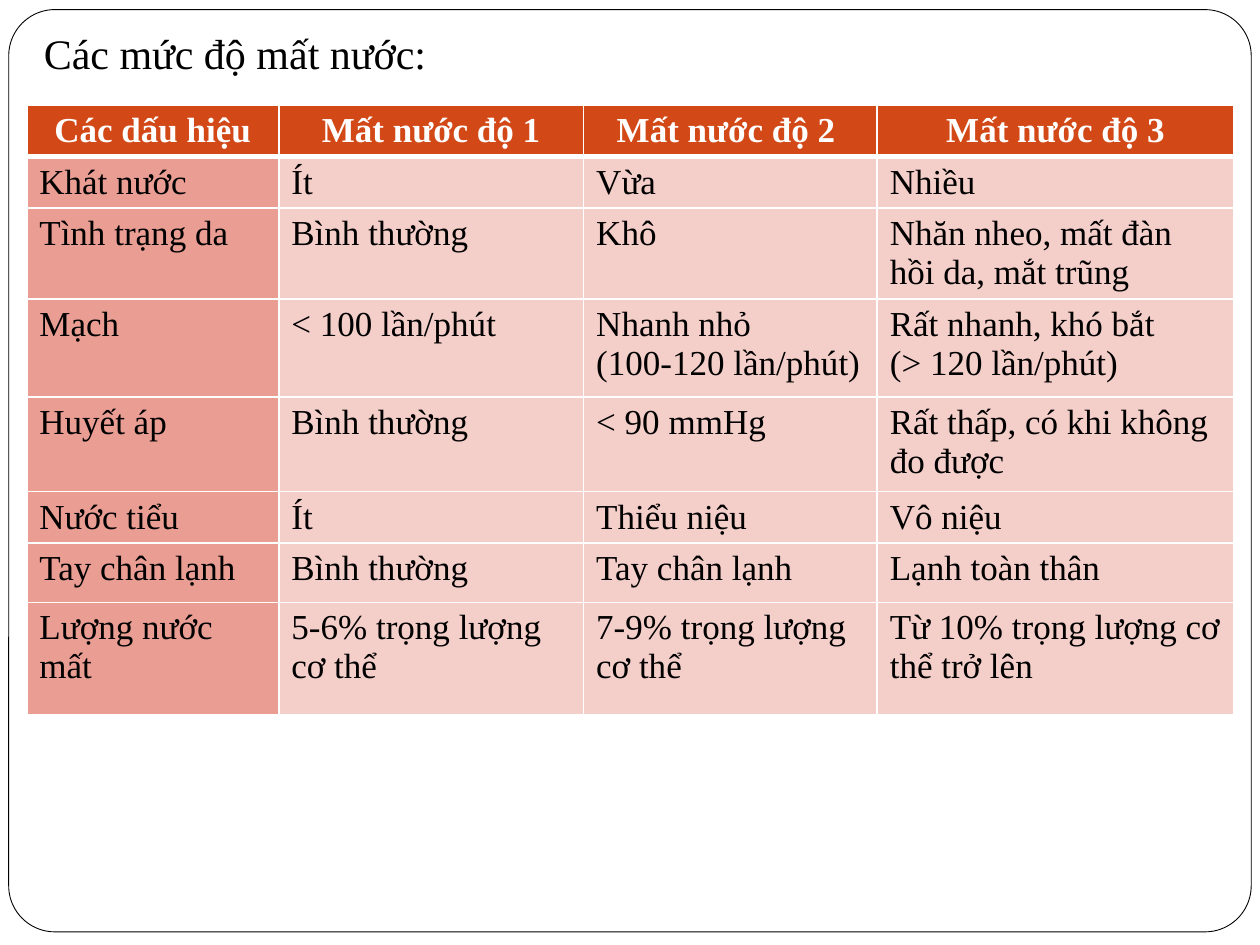
from lxml import etree
from pptx import Presentation
from pptx.dml.color import RGBColor
from pptx.enum import shapes, text
from pptx.oxml.ns import qn
from pptx.util import Pt

# Content: a line break starts a new paragraph in the cell
TITLE = "Các mức độ mất nước:"
ROWS = [
    ("Các dấu hiệu", "Mất nước độ 1", "Mất nước độ 2 ", "Mất nước độ 3"),
    ("Khát nước", "Ít", "Vừa", "Nhiều"),
    ("Tình trạng da", "Bình thường", "Khô", "Nhăn nheo, mất đàn hồi da, mắt trũng"),
    ("Mạch", "< 100 lần/phút", "Nhanh nhỏ\n(100-120 lần/phút)",
     "Rất nhanh, khó bắt\n(> 120 lần/phút)"),
    ("Huyết áp", "Bình thường", "< 90 mmHg", "Rất thấp, có khi không đo được"),
    ("Nước tiểu", "Ít", "Thiểu niệu", "Vô niệu"),
    ("Tay chân lạnh", "Bình thường", "Tay chân lạnh", "Lạnh toàn thân"),
    ("Lượng nước mất", "5-6% trọng lượng\ncơ thể", "7-9% trọng lượng\ncơ thể",
     "Từ 10% trọng lượng cơ thể trở lên"),
]
COLUMN_WIDTHS = [144, 174.2, 167.8, 203.8]
ROW_HEIGHTS = [29.5, 29.5, 51.8, 56.2, 54, 29.5, 33.8, 64]
FONT = "Times New Roman"
COLORS = {"white": "FFFFFF", "black": "000000", "header": "D34817",
          "sign": "E99D93", "body": "F4CEC9"}


def rgb(name):
    return RGBColor.from_string(COLORS[name])


def add_text(para, words, size, color, bold=False):
    span = para.add_run()
    span.text = words
    span.font.name, span.font.size, span.font.bold = FONT, Pt(size), bold
    span.font.color.rgb = rgb(color)


def set_borders(cell, bottom, top):
    properties = cell._tc.get_or_add_tcPr()
    widths = {"a:lnL": 1, "a:lnR": 1, "a:lnT": top, "a:lnB": bottom}
    for position, (tag, width) in enumerate(widths.items()):
        line = etree.Element(qn(tag), w=str(Pt(width)))
        fill = etree.SubElement(line, qn("a:solidFill"))
        etree.SubElement(fill, qn("a:srgbClr"), val=COLORS["white"])
        properties.insert(position, line)


deck = Presentation()
deck.slide_width, deck.slide_height = Pt(720), Pt(540)
page = deck.slides.add_slide(deck.slide_layouts[6])

# Rounded page frame
frame = page.shapes.add_shape(shapes.MSO_SHAPE.ROUNDED_RECTANGLE,
                              Pt(5), Pt(5.5), Pt(710), Pt(527))
frame.adjustments[0] = 0.05
frame.shadow.inherit = False
frame.fill.solid()
frame.fill.fore_color.rgb = rgb("white")
frame.line.color.rgb = rgb("black")
frame.line.width = Pt(0.5)

# Table of signs by degree
table = page.shapes.add_table(len(ROWS), len(COLUMN_WIDTHS), Pt(15.3), Pt(60),
                              Pt(sum(COLUMN_WIDTHS)), Pt(sum(ROW_HEIGHTS))).table
for column, width in zip(table.columns, COLUMN_WIDTHS):
    column.width = Pt(width)
for r, (row, height) in enumerate(zip(ROWS, ROW_HEIGHTS)):
    table.rows[r].height = Pt(height)
    header = r == 0
    for c, content in enumerate(row):
        cell = table.cell(r, c)
        cell.fill.solid()
        cell.fill.fore_color.rgb = rgb("header" if header else "body" if c else "sign")
        set_borders(cell, bottom=3 if header else 1, top=3 if r == 1 else 1)
        for i, words in enumerate(content.split("\n")):
            box = cell.text_frame
            para = box.add_paragraph() if i else box.paragraphs[0]
            if header:
                para.alignment = text.PP_ALIGN.CENTER
            add_text(para, words, 20, "white" if header else "black", header)

# Title
box = page.shapes.add_textbox(Pt(18), Pt(12.2), Pt(690), Pt(527.8)).text_frame
box.word_wrap = True
box.paragraphs[0].space_before = Pt(5.8)
add_text(box.paragraphs[0], TITLE, 24, "black")

deck.save("out.pptx")
